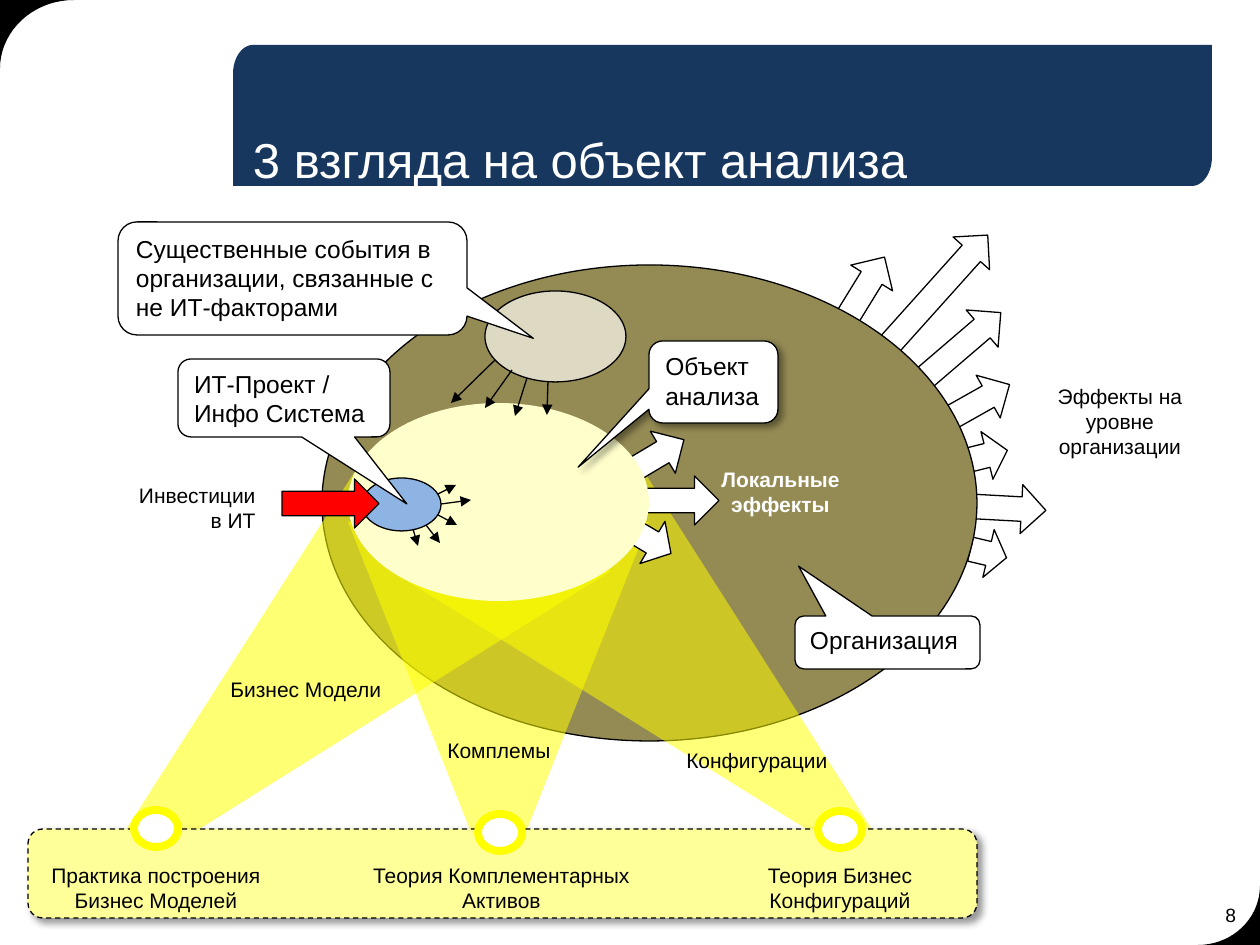
from collections import namedtuple
from math import cos, radians, sin

from lxml.etree import SubElement
from pptx import Presentation
from pptx.dml.color import RGBColor
from pptx.enum.dml import MSO_LINE
from pptx.enum.shapes import MSO_CONNECTOR, MSO_SHAPE
from pptx.enum.text import MSO_ANCHOR, MSO_AUTO_SIZE, PP_ALIGN
from pptx.oxml.ns import qn
from pptx.util import Pt

PX = 914400 / 126
Box = namedtuple("Box", "left top width height")
BLACK, WHITE, YELLOW = "000000", "FFFFFF", "FFFF00"
LEFT, CENTER, RIGHT = PP_ALIGN.LEFT, PP_ALIGN.CENTER, PP_ALIGN.RIGHT


def emu(length):
    return round(length * PX)


def color(value):
    return RGBColor.from_string(value)


def inside(box, left, top, width, height):
    return [emu(n) for n in (box.left + left, box.top + top, width, height)]


def write(shape, text, size, align=LEFT, ink=BLACK, anchor=MSO_ANCHOR.TOP, wrap=True, bold=False):
    frame = shape.text_frame
    frame.text = text
    frame.word_wrap = wrap
    frame.vertical_anchor = anchor
    para = frame.paragraphs[0]
    para.alignment = align
    font = para.runs[0].font
    for name, value in {"name": "Arial", "size": Pt(size), "bold": bold}.items():
        setattr(font, name, value)
    font.color.rgb = color(ink)
    return frame


def no_margins(frame):
    for side in ("left", "top", "right", "bottom"):
        setattr(frame, f"margin_{side}", 0)


def label(page, place, text, size=12, align=CENTER, **style):
    return write(page.shapes.add_textbox(*place), text, size, align, **style)


def paint(shape, fill, line=BLACK, width=0.75, opacity=None):
    shape.shadow.inherit = False
    shape.fill.solid()
    shape.fill.fore_color.rgb = color(fill)
    if opacity:
        paint_color = shape.fill._xPr.find(qn("a:solidFill"))[0]
        SubElement(paint_color, qn("a:alpha"), val=str(opacity * 1000))
    if line:
        shape.line.color.rgb = color(line)
        shape.line.width = Pt(width)
    else:
        shape.line.fill.background()
    return shape


def preset(page, kind, place, fill=WHITE, **style):
    return paint(page.shapes.add_shape(kind, *place), fill, **style)


def outline(page, box, points, fill, opacity=None):
    corners = [(emu(box.left + x), emu(box.top + y)) for x, y in points]
    builder = page.shapes.build_freeform(*corners[0], scale=1.0)
    builder.add_line_segments(corners[1:], close=True)
    return paint(builder.convert_to_shape(), fill, None, opacity=opacity)


def arc(center_x, center_y, radius_x, radius_y, start):
    """Points of a quarter ellipse, clockwise from the start angle."""
    angles = [radians(start + step * 5) for step in range(19)]
    return [(center_x + radius_x * cos(a), center_y + radius_y * sin(a)) for a in angles]


def drop_shadow(shape):
    effects = shape._element.spPr.find(qn("a:effectLst"))
    shadow = SubElement(effects, qn("a:outerShdw"), blurRad=str(Pt(4)), dist=str(Pt(3)),
                        dir=str(45 * 60000), algn="tl", rotWithShape="0")
    tint = SubElement(shadow, qn("a:srgbClr"), val=BLACK)
    SubElement(tint, qn("a:alpha"), val="40000")


def callout(page, place, tip, text):
    shape = preset(page, MSO_SHAPE.ROUNDED_RECTANGULAR_CALLOUT, place)
    for index, value in enumerate(tip):
        shape.adjustments[index] = value
    write(shape, text, 14)
    return shape


def block_arrow(page, box, left, top, length, angle=0, fill=WHITE):
    shape = preset(page, MSO_SHAPE.RIGHT_ARROW, inside(box, left, top, length, 49), fill)
    shape.rotation = angle


def thin_arrows(page, box, ends):
    for x1, y1, x2, y2 in ends:
        start, end = inside(box, x1, y1, 0, 0)[:2], inside(box, x2, y2, 0, 0)[:2]
        arrow = page.shapes.add_connector(MSO_CONNECTOR.STRAIGHT, *start, *end)
        arrow.line.color.rgb = color(BLACK)
        arrow.line.width = Pt(0.75)
        SubElement(arrow.line._get_or_add_ln(), qn("a:tailEnd"), type="triangle")
        SubElement(arrow._element.spPr, qn("a:effectLst"))


def page_frame(page, box):
    banner = Box(box.left + 233, box.top + 45, 979, 141)
    wide, high = banner.width, banner.height
    outline(page, banner, [*arc(20, 29, 20, 29, 180), (wide, 0),
                           *arc(wide - 20, high - 29, 20, 29, 0), (0, high)], "17375E")
    outline(page, box, [(0, 0), *arc(74, 69, 74, 69, 180)], BLACK)
    right, bottom = box.width, box.height
    outline(page, box, [(right, bottom), *arc(right - 62, bottom - 59, 62, 59, 0)], BLACK)
    title = page.shapes.title
    title.left, title.top, title.width, title.height = inside(box, 253, 140, 903, 48)
    frame = write(title, "3 взгляда на объект анализа", 28, ink=WHITE, anchor=MSO_ANCHOR.BOTTOM)
    frame.auto_size = MSO_AUTO_SIZE.NONE
    frame.paragraphs[0].line_spacing = 0.8
    no_margins(frame)
    no_margins(label(page, inside(box, 1063, 903, 173, 32), "8", 11, RIGHT))


def organization(page, box):
    for effect in ((652, 219, 72, 3.1), (648, 264, 37, 13.3), (590, 56, 101, 319.4),
                   (623, 112, 69, 330.6), (644, 166, 42, 346), (544, 0, 146, 311.9),
                   (510, -3, 69, 301.6)):
        block_arrow(page, box, *effect)
    preset(page, MSO_SHAPE.OVAL, inside(box, 0, 0, box.width, box.height), "948A54")
    callout(page, inside(box, 473, 351, 185, 53), (-0.48, -1.44), "Организация")
    label(page, inside(box, 723, 112, 150, 89), "Эффекты на уровне организации")


def beams(page, box):
    outline(page, box, [(244, 9), (496, 115), (54, 392), (0, 391)], YELLOW, 55)
    outline(page, box, [(519, 0), (268, 110), (709, 384), (763, 383)], YELLOW, 53)
    middle = preset(page, MSO_SHAPE.TRAPEZOID, inside(box, 233, 66, 301, 315), YELLOW,
                    line=None, opacity=53)
    middle.adjustments[0] = 0.415
    middle._element.spPr.xfrm.set("flipV", "1")
    label(page, inside(box, 103, 214, 184, 38), "Бизнес Модели", align=LEFT, wrap=False)
    label(page, inside(box, 297, 275, 174, 38), "Комплемы")
    label(page, inside(box, 554, 285, 176, 38), "Конфигурации")


def theories(page, box):
    panel = preset(page, MSO_SHAPE.ROUNDED_RECTANGLE,
                   inside(box, 0, 0, box.width, box.height), "FFFF99")
    panel.line.dash_style = MSO_LINE.DASH
    drop_shadow(panel)
    for lamp_left, lamp_top, left, width, text in (
            (106, -19, -13, 282, "Практика построения Бизнес Моделей"),
            (450, -15, 325, 297, "Теория Комплементарных Активов"),
            (790, -18, 695, 234, "Теория Бизнес Конфигураций")):
        preset(page, MSO_SHAPE.OVAL, inside(box, lamp_left, lamp_top, 44, 37),
               line=YELLOW, width=4.5)
        label(page, inside(box, left, 27, width, 63), text)


def analysis_object(page, box):
    for effect in ((292, 73, 79, 0), (283, 115, 43, 30.7), (282, 27, 58, 329.3)):
        block_arrow(page, box, *effect)
    label(page, inside(box, 353, 57, 159, 63), "Локальные эффекты", ink=WHITE, bold=True)
    preset(page, MSO_SHAPE.OVAL, inside(box, 0, 0, box.width, box.height), "FFFFCC", line=None)
    drop_shadow(callout(page, inside(box, 301, -62, 129, 82), (-1.05, 1.04), "Объект анализа"))


def project(page, box):
    preset(page, MSO_SHAPE.OVAL, inside(box, 0, 0, box.width, box.height), "8EB4E3")
    block_arrow(page, box, -80, 1, 97, fill="FF0000")
    label(page, inside(box, -244, -2, 150, 63), "Инвестиции в ИТ", align=RIGHT)
    callout(page, inside(box, -184, -119, 212, 78), (0.58, 1.36), "ИТ-Проект / Инфо Система")
    thin_arrows(page, box, [(76, 16, 94, 7), (76, 37, 95, 47), (79, 26, 109, 22),
                            (51, 51, 56, 68), (64, 47, 78, 65)])


def outside_events(page, box):
    preset(page, MSO_SHAPE.OVAL, inside(box, 0, 0, box.width, box.height), "DDD9C3")
    callout(page, inside(box, -367, -69, 349, 113), (0.69, 0.53),
            "Существенные события в организации, связанные с не ИТ-факторами")
    thin_arrows(page, box, [(42, 87, 30, 125), (27, 79, 0, 117),
                            (10, 69, -34, 112), (63, 91, 62, 124)])


def main():
    deck = Presentation()
    deck.slide_width, deck.slide_height = emu(1260), emu(945)
    page = deck.slides.add_slide(deck.slide_layouts[5])
    page_frame(page, Box(0, 0, 1260, 945))
    # The title placeholder goes above the banner
    page.shapes._spTree.append(page.shapes.title._element)
    organization(page, Box(322, 265, 655, 476))
    beams(page, Box(115, 456, 763, 392))
    theories(page, Box(28, 829, 949, 89))
    analysis_object(page, Box(348, 403, 301, 198))
    project(page, Box(362, 478, 79, 53))
    outside_events(page, Box(485, 291, 141, 91))
    deck.save("out.pptx")


if __name__ == "__main__":
    main()
